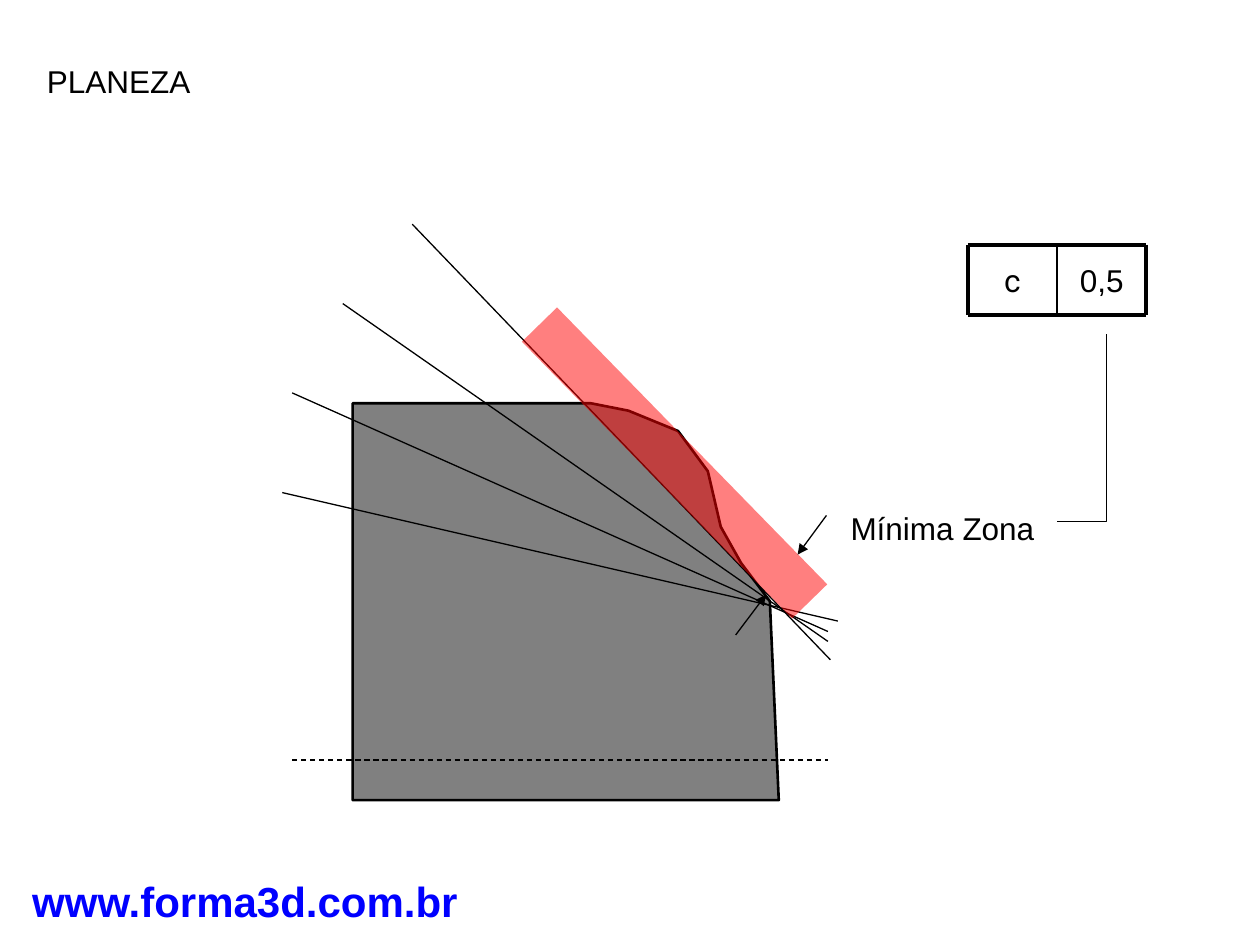
from typing import NamedTuple, Optional

from lxml.etree import SubElement
from pptx import Presentation
from pptx.dml.color import RGBColor
from pptx.enum.dml import MSO_LINE_DASH_STYLE as Dash
from pptx.enum.shapes import MSO_CONNECTOR, MSO_SHAPE
from pptx.enum.text import MSO_ANCHOR as Anchor, MSO_AUTO_SIZE as AutoSize, PP_ALIGN as Align
from pptx.oxml.ns import qn
from pptx.util import Cm, Pt

BLACK = RGBColor(0x00, 0x00, 0x00)
WHITE = RGBColor(0xFF, 0xFF, 0xFF)
GRAY = RGBColor(0x80, 0x80, 0x80)
RED = RGBColor(0xFF, 0x00, 0x00)
BLUE = RGBColor(0x00, 0x00, 0xFF)


class Box(NamedTuple):
    left: float
    top: float
    width: float
    height: float

    def lengths(self) -> list:
        return [Cm(value) for value in self]


class Line(NamedTuple):
    start: tuple
    end: tuple
    weight: float = 0.75
    dash: Optional[Dash] = None
    arrow: bool = False


class Cell(NamedTuple):
    text: str
    font: str


# All positions are in centimetres
PART_OUTLINE = [
    (7.11, 16.13), (15.7, 16.13), (15.52, 12.12), (14.94, 11.35), (14.53, 10.62),
    (14.27, 9.5), (13.67, 8.69), (12.67, 8.28), (11.91, 8.13), (7.11, 8.13),
]
DATUM_LINE = Line((5.89, 15.32), (16.69, 15.32), dash=Dash.DASH)
CANDIDATE_LINES = [
    Line((16.89, 12.52), (5.69, 9.93)),
    Line((16.69, 12.73), (5.89, 7.92)),
    Line((16.69, 12.93), (6.91, 6.12)),
    Line((16.74, 13.3), (8.31, 4.52)),
]
ZONE_ARROWS = [
    Line((16.66, 10.39), (16.08, 11.18), arrow=True),
    Line((14.83, 12.8), (15.44, 11.99), arrow=True),
]
LEADER = [(21.31, 10.52), (22.3, 10.52), (22.3, 6.73)]
TOLERANCE_CELLS = [Cell("c", "Roboto"), Cell("0,5", "Arial")]
FRAME = Box(19.51, 4.93, 3.6, 1.42)


def write_text(shape, text: str, align: Align, font: str = "Arial", size: float = 18,
               color: RGBColor = BLACK, bold: bool = False) -> None:
    shape.text_frame.text = text
    paragraph = shape.text_frame.paragraphs[0]
    paragraph.alignment = align
    run_font = paragraph.runs[0].font
    run_font.name, run_font.size, run_font.bold = font, Pt(size), bold
    run_font.color.rgb = color


def fit_frame(shape) -> None:
    shape.text_frame.word_wrap = False
    shape.text_frame.auto_size = AutoSize.SHAPE_TO_FIT_TEXT
    shape.text_frame.vertical_anchor = Anchor.TOP


def add_label(slide, box: Box, text: str, **style) -> None:
    label = slide.shapes.add_textbox(*box.lengths())
    fit_frame(label)
    write_text(label, text, Align.CENTER, **style)


def add_line(slide, line: Line) -> None:
    points = [Cm(value) for value in (*line.start, *line.end)]
    connector = slide.shapes.add_connector(MSO_CONNECTOR.STRAIGHT, *points)
    connector.line.color.rgb = BLACK
    connector.line.width = Pt(line.weight)
    if line.dash:
        connector.line.dash_style = line.dash
    properties = connector._element.spPr
    if line.arrow:
        SubElement(properties.find(qn("a:ln")), qn("a:tailEnd"), type="triangle")
    SubElement(properties, qn("a:effectLst"))


def add_outline(slide, points: list, weight: float, fill: Optional[RGBColor] = None) -> None:
    corners = [(Cm(x), Cm(y)) for x, y in points]
    builder = slide.shapes.build_freeform(*corners[0], scale=1.0)
    builder.add_line_segments(corners[1:], close=fill is not None)
    shape = builder.convert_to_shape()
    shape.shadow.inherit = False
    shape.line.color.rgb = BLACK
    shape.line.width = Pt(weight)
    if fill is None:
        shape.fill.background()
    else:
        shape.fill.solid()
        shape.fill.fore_color.rgb = fill


def add_rectangle(slide, box: Box, fill: RGBColor):
    shape = slide.shapes.add_shape(MSO_SHAPE.RECTANGLE, *box.lengths())
    shape.shadow.inherit = False
    shape.fill.solid()
    shape.fill.fore_color.rgb = fill
    shape.line.fill.background()
    return shape


def add_tolerance_frame(slide) -> None:
    cell_width = FRAME.width / len(TOLERANCE_CELLS)
    right, bottom = FRAME.left + FRAME.width, FRAME.top + FRAME.height
    for index, cell in enumerate(TOLERANCE_CELLS):
        box = Box(FRAME.left + index * cell_width, FRAME.top, cell_width, FRAME.height)
        shape = add_rectangle(slide, box, WHITE)
        shape.text_frame.vertical_anchor = Anchor.MIDDLE
        write_text(shape, cell.text, Align.CENTER, font=cell.font)
    for y in (FRAME.top, bottom):
        add_line(slide, Line((FRAME.left, y), (right, y), 2.25))
    for x, weight in ((FRAME.left, 2.25), (FRAME.left + cell_width, 1), (right, 2.25)):
        add_line(slide, Line((x, FRAME.top), (x, bottom), weight))


def main() -> None:
    presentation = Presentation()
    presentation.slide_width, presentation.slide_height = Cm(25.4), Cm(19.05)
    slide = presentation.slides.add_slide(presentation.slide_layouts[5])

    # Title and site address
    title = slide.shapes.title
    title.left, title.top, title.width, title.height = Box(0.69, 1.12, 3.43, 1.02).lengths()
    fit_frame(title)
    write_text(title, "PLANEZA", Align.LEFT)
    add_label(slide, Box(0.38, 17.53, 9.12, 1.27), "www.forma3d.com.br",
              size=24, color=BLUE, bold=True)

    # Part with its datum and candidate lines
    add_outline(slide, PART_OUTLINE, 1.5, GRAY)
    for line in (DATUM_LINE, *CANDIDATE_LINES):
        add_line(slide, line)

    # Half-transparent minimum zone
    zone = add_rectangle(slide, Box(9.7, 8.84, 7.8, 0.99), RED)
    zone.rotation = 45.7
    zone_color = zone._element.spPr.find(qn("a:solidFill"))[0]
    SubElement(zone_color, qn("a:alpha"), val="50000")
    for arrow in ZONE_ARROWS:
        add_line(slide, arrow)
    add_label(slide, Box(16.89, 10.13, 4.22, 1.02), "Mínima Zona")

    # Tolerance frame and its leader
    add_tolerance_frame(slide)
    add_outline(slide, LEADER, 0.75)

    presentation.save("out.pptx")


if __name__ == "__main__":
    main()
